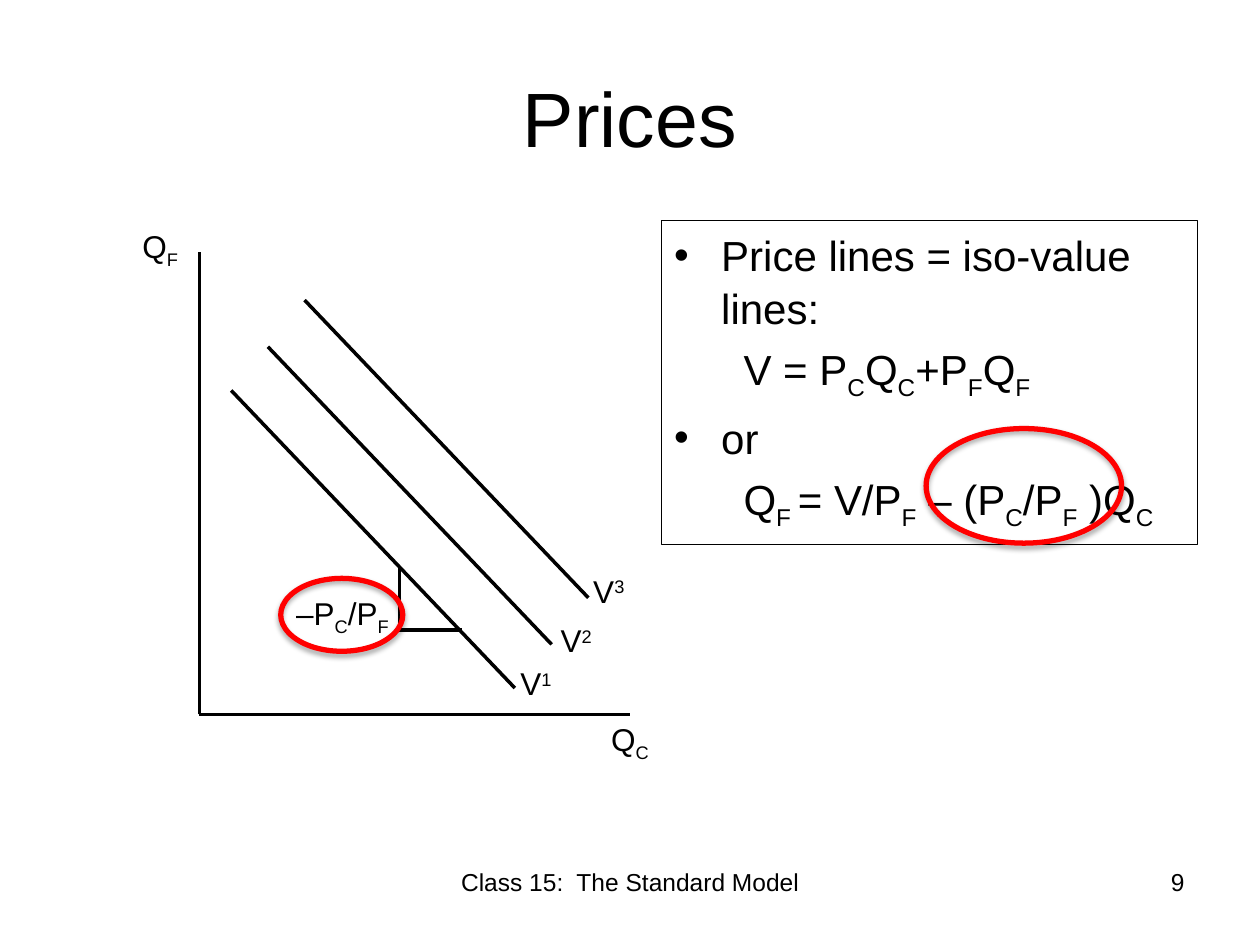
import pptx
import pptx.util
import pptx.dml.color
import pptx.enum.shapes
import pptx.enum.text
import pptx.oxml
import pptx.oxml.ns

Cm = pptx.util.Cm
Pt = pptx.util.Pt
ALIGN = pptx.enum.text.PP_ALIGN
BLACK = "000000"
RED = "FF0000"
SUBSCRIPT = -25000
SUPERSCRIPT = 30000


def color(value):
    return pptx.dml.color.RGBColor.from_string(value)


def add_xml(parent, tag, content="", **attributes):
    settings = " ".join(f'{name}="{value}"' for name, value in attributes.items())
    namespace = pptx.oxml.ns.nsdecls("a")
    parent.append(pptx.oxml.parse_xml(f"<a:{tag} {namespace} {settings}>{content}</a:{tag}>"))


def write_runs(para, text, size, baseline=SUBSCRIPT):
    for index, part in enumerate(text.split("_")):
        if not part:
            continue
        span = para.add_run()
        span.text = part
        span.font.size = Pt(size)
        span.font.name = "Arial"
        span.font.color.rgb = color(BLACK)
        if index % 2:
            span.font._element.set("baseline", str(baseline))


def add_text(page, text, left, top, width, height, size=18, align=ALIGN.LEFT,
             baseline=SUBSCRIPT, wrap=True):
    box = page.shapes.add_textbox(Cm(left), Cm(top), Cm(width), Cm(height))
    box.text_frame.word_wrap = wrap
    para = box.text_frame.paragraphs[0]
    para.alignment = align
    write_runs(para, text, size, baseline)
    return box


def add_line(page, x1, y1, x2, y2):
    line = page.shapes.add_connector(
        pptx.enum.shapes.MSO_CONNECTOR.STRAIGHT, Cm(x1), Cm(y1), Cm(x2), Cm(y2))
    line.line.color.rgb = color(BLACK)
    line.line.width = Pt(2)
    add_xml(line._element.spPr, "effectLst")


def add_ring(page, left, top, width, height):
    ring = page.shapes.add_shape(
        pptx.enum.shapes.MSO_SHAPE.OVAL, Cm(left), Cm(top), Cm(width), Cm(height))
    ring.fill.background()
    ring.line.color.rgb = color(RED)
    ring.line.width = Pt(3)
    shadow = (f'<a:outerShdw blurRad="{Pt(3.1)}" dist="{Pt(1.8)}" dir="5400000" rotWithShape="0">'
              f'<a:srgbClr val="{BLACK}"><a:alpha val="35000"/></a:srgbClr></a:outerShdw>')
    add_xml(ring._element.spPr, "effectLst", shadow)


def add_equations(page):
    box = page.shapes.add_textbox(Cm(13.34), Cm(4.45), Cm(10.8), Cm(6.53))
    box.line.color.rgb = color(BLACK)
    box.line.width = Pt(0.75)
    frame = box.text_frame
    frame.word_wrap = True
    lines = [
        ("Price lines = iso-value lines:", True),
        ("V = P_C_Q_C_+P_F_Q_F", False),
        ("or", True),
        ("Q_F _= V/P_F_ – (P_C_/P_F_ )Q_C", False),
    ]
    for index, (text, bulleted) in enumerate(lines):
        para = frame.add_paragraph() if index else frame.paragraphs[0]
        para.line_spacing = 1.05
        para.space_before = Pt(4.8 if index else 0)
        properties = para._element.get_or_add_pPr()
        properties.set("marL", str(Cm(0.95 if bulleted else 1.4)))
        properties.set("indent", str(Cm(-0.95 if bulleted else 0)))
        if bulleted:
            add_xml(properties, "buFont", typeface="Arial")
            add_xml(properties, "buChar", char="•")
        write_runs(para, text, 24)


def add_axes(page):
    left, bottom = 4.02, 14.4
    add_line(page, left, bottom, 12.7, bottom)
    add_line(page, left, bottom, left, 5.08)
    add_text(page, "Q_C", 12.07, bottom, 1.9, 1.8)
    add_text(page, "Q_F", 2.62, 4.45, 1.9, 1.8)


def add_price_lines(page):
    run, rise = 5.72, 6
    price_lines = [
        ("V_1", 4.66, 7.87, 10.24, 13.26),
        ("V_2", 5.4, 6.99, 11.05, 12.4),
        ("V_3", 6.14, 6.05, 11.71, 11.4),
    ]
    for label, x, y, label_left, label_top in price_lines:
        add_line(page, x, y, x + run, y + rise)
        add_text(page, label, label_left, label_top, 2.39, 1.02, baseline=SUPERSCRIPT)


def add_slope(page):
    corner_x, corner_y = 8.05, 12.7
    add_line(page, corner_x, corner_y - 1.27, corner_x, corner_y)
    add_line(page, corner_x + 1.27, corner_y, corner_x, corner_y)
    add_text(page, "–P_C_/P_F", 5.72, 11.86, 2.46, 1.02, wrap=False)


def main():
    deck = pptx.Presentation()
    deck.slide_width = Cm(25.4)
    deck.slide_height = Cm(19.05)
    page = deck.slides.add_slide(deck.slide_layouts[6])
    title = add_text(page, "Prices", 1.27, 0.76, 22.86, 3.18, 44, ALIGN.CENTER)
    title.text_frame.vertical_anchor = pptx.enum.text.MSO_ANCHOR.MIDDLE
    add_axes(page)
    add_equations(page)
    add_price_lines(page)
    add_slope(page)
    add_text(page, "Class 15:  The Standard Model", 8.68, 17.35, 8.05, 1.32, 14, ALIGN.CENTER)
    add_text(page, "9", 18.21, 17.35, 5.92, 1.32, 14, ALIGN.RIGHT)
    add_ring(page, 18.67, 8.64, 3.94, 2.31)
    add_ring(page, 5.66, 11.66, 2.46, 1.47)
    deck.save("out.pptx")


if __name__ == "__main__":
    main()
